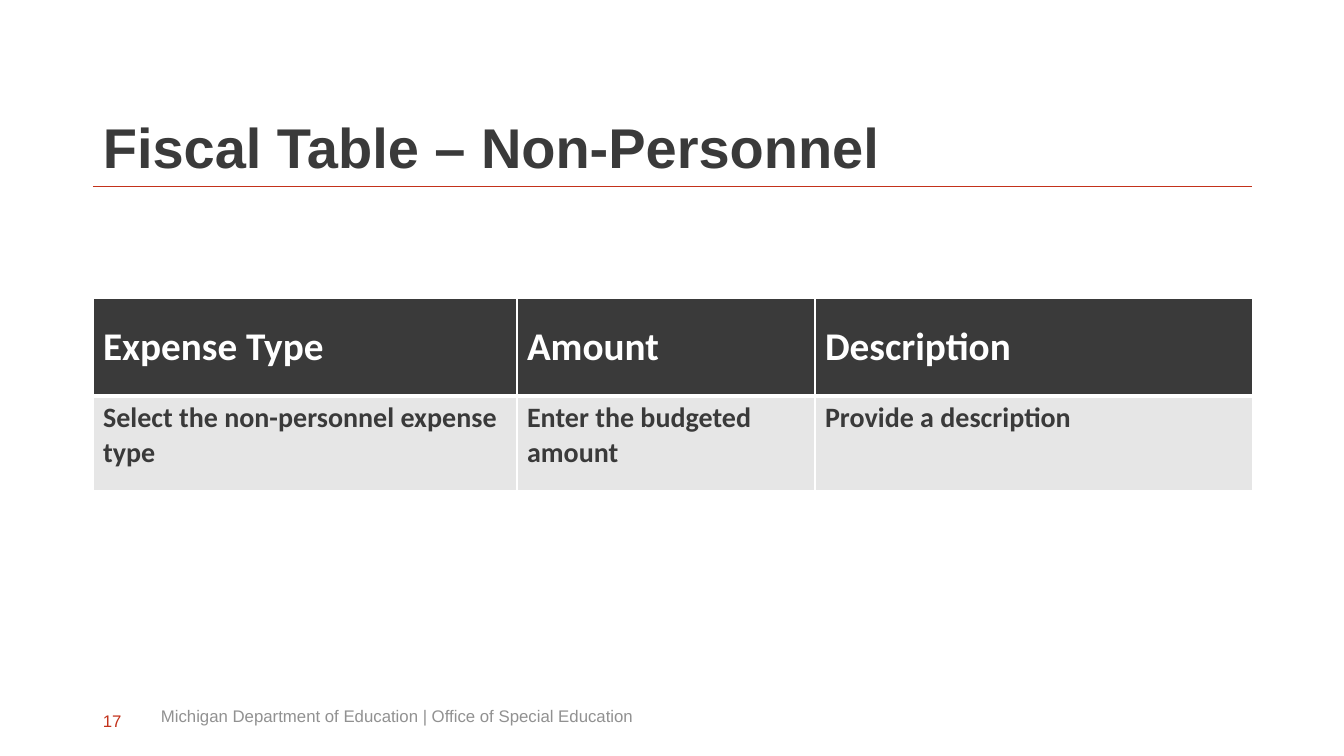
import pptx
import pptx.dml.color
import pptx.enum.shapes
import pptx.enum.text
import pptx.oxml
import pptx.oxml.ns
import pptx.util

DARK, RED, GREY, PALE, WHITE = "3A3A3A", "C3321B", "919191", "E6E6E6", "FFFFFF"
TOP = pptx.enum.text.MSO_ANCHOR.TOP
MIDDLE = pptx.enum.text.MSO_ANCHOR.MIDDLE
BOTTOM = pptx.enum.text.MSO_ANCHOR.BOTTOM

SLIDE_SIZE = (1344, 756)
LEFT = 93
RULE_Y, RULE_END = 186, 1252

TEXTS = [
    ("Fiscal Table – Non-Personnel", (LEFT, 40, 1210, 146), BOTTOM, DARK,
     {"name": "Arial", "size": pptx.util.Pt(40), "bold": True}),
    ("17", (LEFT, 701, 45, 40), MIDDLE, RED,
     {"name": "Arial", "size": pptx.util.Pt(12)}),
    ("Michigan Department of Education | Office of Special Education",
     (151, 696, 846, 40), MIDDLE, GREY,
     {"name": "Arial", "size": pptx.util.Pt(12)}),
]

EXPENSES_TOP = 298
COLUMN_WIDTHS = [424, 298, 438]
EXPENSE_ROWS = [
    {"words": ["Expense Type", "Amount", "Description"],
     "height": 98, "anchor": MIDDLE, "fill": DARK, "color": WHITE,
     "font": {"name": "Calibri", "size": pptx.util.Pt(28), "bold": True},
     "borders": {"lnL": 1, "lnR": 1, "lnT": 1, "lnB": 3}},
    {"words": ["Select the non-personnel expense type",
               "Enter the budgeted amount", "Provide a description"],
     "height": 95, "anchor": TOP, "fill": PALE, "color": DARK,
     "font": {"name": "Calibri", "size": pptx.util.Pt(20), "bold": True},
     "borders": {"lnL": 1, "lnR": 1, "lnT": 3, "lnB": 1}},
]


def px(length):
    return round(length * 914400 / 100.8)


def rgb(code):
    return pptx.dml.color.RGBColor.from_string(code)


def write(frame, words, color, font):
    paragraph = frame.paragraphs[0]
    run = paragraph.add_run()
    run.text = words
    run.font.color.rgb = rgb(color)
    for attribute, value in font.items():
        setattr(run.font, attribute, value)
    return paragraph


def add_text(slide, words, box, anchor, color, font):
    frame = slide.shapes.add_textbox(*map(px, box)).text_frame
    frame.word_wrap = True
    frame.vertical_anchor = anchor
    paragraph = write(frame, words, color, font)
    if anchor == BOTTOM:
        paragraph.line_spacing = 0.9


def add_rule(slide):
    rule = slide.shapes.add_connector(
        pptx.enum.shapes.MSO_CONNECTOR.STRAIGHT,
        px(LEFT), px(RULE_Y), px(RULE_END), px(RULE_Y))
    rule.line.color.rgb = rgb(RED)
    rule.line.width = pptx.util.Pt(0.5)
    rule._element.spPr.append(pptx.oxml.parse_xml(
        f'<a:effectLst {pptx.oxml.ns.nsdecls("a")}/>'))


def add_borders(cell, borders):
    properties = cell._tc.get_or_add_tcPr()
    for position, (side, points) in enumerate(borders.items()):
        properties.insert(position, pptx.oxml.parse_xml(
            f'<a:{side} {pptx.oxml.ns.nsdecls("a")} w="{pptx.util.Pt(points)}">'
            f'<a:solidFill><a:srgbClr val="{WHITE}"/></a:solidFill></a:{side}>'))


def add_expenses(slide):
    height = sum(row["height"] for row in EXPENSE_ROWS)
    expenses = slide.shapes.add_table(
        len(EXPENSE_ROWS), len(COLUMN_WIDTHS), px(LEFT), px(EXPENSES_TOP),
        px(sum(COLUMN_WIDTHS)), px(height)).table
    for column, width in zip(expenses.columns, COLUMN_WIDTHS):
        column.width = px(width)
    for row, content in zip(expenses.rows, EXPENSE_ROWS):
        row.height = px(content["height"])
        for cell, words in zip(row.cells, content["words"]):
            cell.vertical_anchor = content["anchor"]
            cell.fill.solid()
            cell.fill.fore_color.rgb = rgb(content["fill"])
            add_borders(cell, content["borders"])
            write(cell.text_frame, words, content["color"], content["font"])


def main():
    deck = pptx.Presentation()
    deck.slide_width, deck.slide_height = map(px, SLIDE_SIZE)
    slide = deck.slides.add_slide(deck.slide_layouts[6])
    add_rule(slide)
    for text in TEXTS:
        add_text(slide, *text)
    add_expenses(slide)
    deck.save("out.pptx")


if __name__ == "__main__":
    main()
